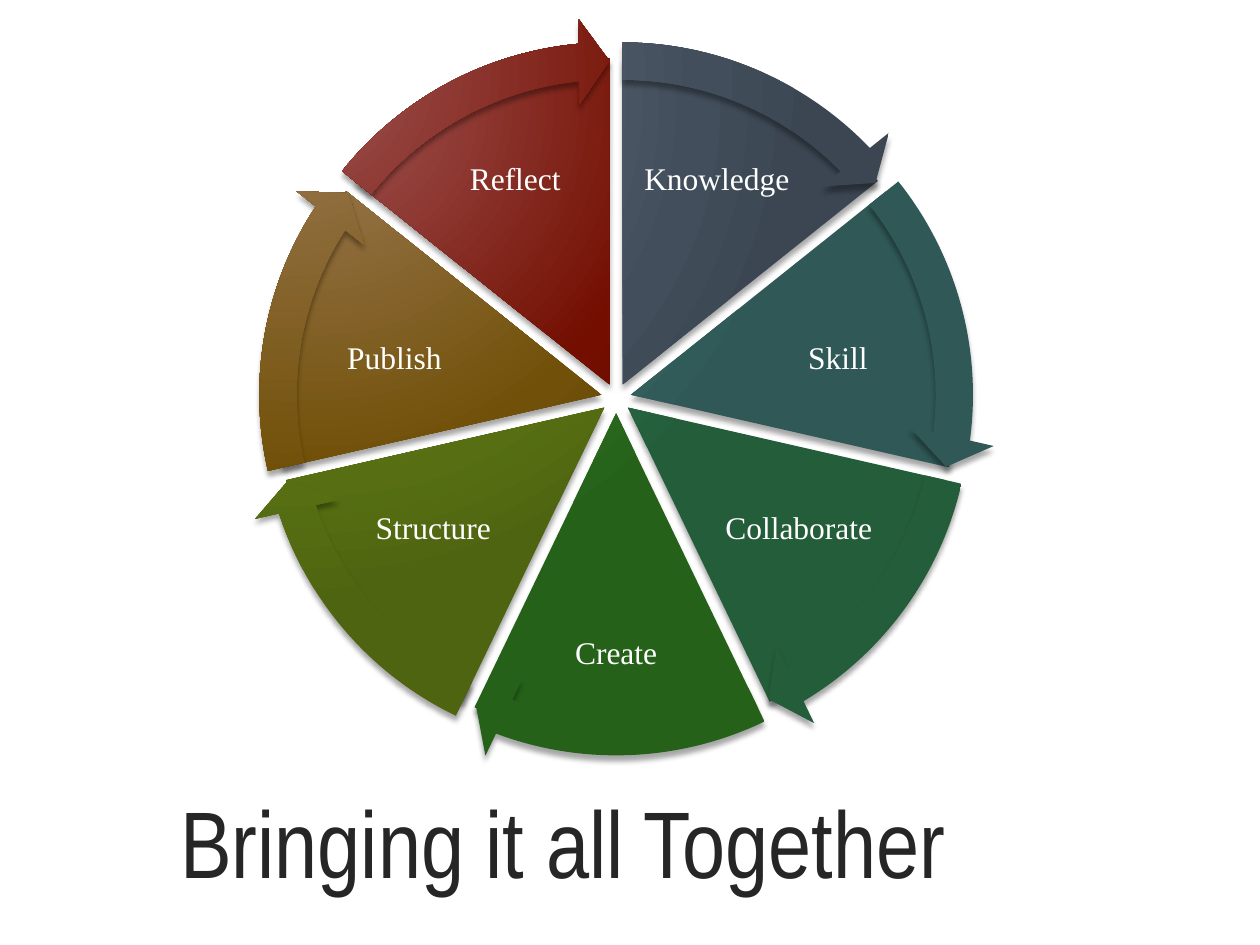
import math

import lxml.etree
import pptx
import pptx.dml.color
import pptx.enum.shapes
import pptx.enum.text
import pptx.oxml
import pptx.oxml.ns
import pptx.util

SHAPES = pptx.enum.shapes.MSO_SHAPE
ALIGN = pptx.enum.text.PP_ALIGN
ANCHOR = pptx.enum.text.MSO_ANCHOR


def write_text(shape, text, *, size, font, color, align, anchor, inset=None, spacing=None):
    frame = shape.text_frame
    frame.word_wrap = True
    frame.auto_size = pptx.enum.text.MSO_AUTO_SIZE.NONE
    frame.vertical_anchor = anchor
    if inset is not None:
        frame.margin_left = frame.margin_right = inset
        frame.margin_top = frame.margin_bottom = inset
    paragraph = frame.paragraphs[0]
    paragraph.alignment = align
    if spacing:
        paragraph.line_spacing = spacing
    run = paragraph.add_run()
    run.text = text
    run.font.size = pptx.util.Pt(size)
    run.font.name = font
    run.font.color.rgb = pptx.dml.color.RGBColor.from_string(color)


def paint(shape, colors):
    """Give the shape a radial gradient, no outline and a soft shadow below."""
    namespace = pptx.oxml.ns.nsdecls("a")
    stops = "".join(
        f'<a:gs pos="{position}"><a:srgbClr val="{color}"/></a:gs>'
        for position, color in zip((0, 76000, 100000), colors)
    )
    properties = shape.element.spPr
    properties.append(pptx.oxml.parse_xml(
        f'<a:gradFill {namespace} rotWithShape="1"><a:gsLst>{stops}</a:gsLst>'
        '<a:path path="circle">'
        '<a:fillToRect l="15000" t="15000" r="100000" b="100000"/>'
        '</a:path></a:gradFill>'
    ))
    shape.line.fill.background()
    shape.shadow.inherit = False
    effects = properties.find(pptx.oxml.ns.qn("a:effectLst"))
    effects.append(pptx.oxml.parse_xml(
        f'<a:outerShdw {namespace} blurRad="38100" dist="38100" dir="5400000" '
        'rotWithShape="0"><a:srgbClr val="000000"><a:alpha val="35000"/>'
        '</a:srgbClr></a:outerShdw>'
    ))


presentation = pptx.Presentation()
presentation.slide_width = pptx.util.Inches(10)
presentation.slide_height = pptx.util.Inches(7.5)
slide = presentation.slides.add_slide(presentation.slide_layouts[5])

# The slide is a grid of 10 columns by 7.5 rows of square cells.
cell = presentation.slide_width // 10

title = slide.shapes.title
title.left, title.top, title.width, title.height = [
    int(cell * length) for length in (1.33, 5.42, 7.42, 1.75)
]
write_text(title, "Bringing it all Together", size=54, font="Arial Narrow",
           color="262626", align=ALIGN.LEFT, anchor=ANCHOR.BOTTOM)

# Name, gradient colours, label centre from the hub, label size
steps = [
    ("Knowledge", ("6D7784", "424E5B", "3B4652"), (0.8, -1.73), (1.23, 0.99)),
    ("Skill", ("658B89", "35615F", "2F5856"), (1.76, -0.31), (1.42, 0.86)),
    ("Collaborate", ("5E916D", "286740", "245D3A"), (1.45, 1.04), (1.23, 0.96)),
    ("Create", ("5F965A", "2B6B1D", "26611A"), (0, 2.03), (1.2, 0.86)),
    ("Structure", ("809A57", "576F12", "4F6410"), (-1.45, 1.04), (1.23, 0.96)),
    ("Publish", ("9D7955", "715109", "664908"), (-1.76, -0.31), (1.42, 0.86)),
    ("Reflect", ("9F5554", "730E00", "680D00"), (-0.8, -1.73), (1.23, 0.99)),
]
hub_x, hub_y = 4.89, 3.16
slice_size, arrow_size = 5.18, 5.82
gap = 0.12

# Angle adjustments count 216 units to the full circle; 162 points straight up.
full_turn, top_angle = 216, 162
sweep = full_turn / len(steps)
head_angle = 3.28

arrows = []
for index, (name, colors, label_offset, label_size) in enumerate(steps):
    start = (top_angle + index * sweep) % full_turn
    end = (start + sweep) % full_turn
    middle = math.tau * (start + sweep / 2) / full_turn
    center_x = hub_x + gap * math.cos(middle)
    center_y = hub_y + gap * math.sin(middle)

    wedge = slide.shapes.add_shape(SHAPES.PIE, *[
        int(cell * length) for length in (
            center_x - slice_size / 2, center_y - slice_size / 2, slice_size, slice_size)
    ])
    wedge.adjustments[0], wedge.adjustments[1] = start, end
    paint(wedge, colors)

    width, height = label_size
    label = slide.shapes.add_textbox(*[
        int(cell * length) for length in (
            hub_x + label_offset[0] - width / 2, hub_y + label_offset[1] - height / 2,
            width, height)
    ])
    write_text(label, name, size=18, font="Times New Roman", color="FFFFFF",
               align=ALIGN.CENTER, anchor=ANCHOR.MIDDLE,
               inset=pptx.util.Inches(0.03), spacing=0.9)
    arrows.append((center_x, center_y, start, end, colors))

# The arrows lie above every slice.
for center_x, center_y, start, end, colors in arrows:
    arrow = slide.shapes.add_shape(SHAPES.CIRCULAR_ARROW, *[
        int(cell * length) for length in (
            center_x - arrow_size / 2, center_y - arrow_size / 2, arrow_size, arrow_size)
    ])
    values = (0.051, head_angle, (end - head_angle) % full_turn, start, 0.059)
    for position, value in enumerate(values):
        arrow.adjustments[position] = value
    paint(arrow, colors)

presentation.save("out.pptx")
